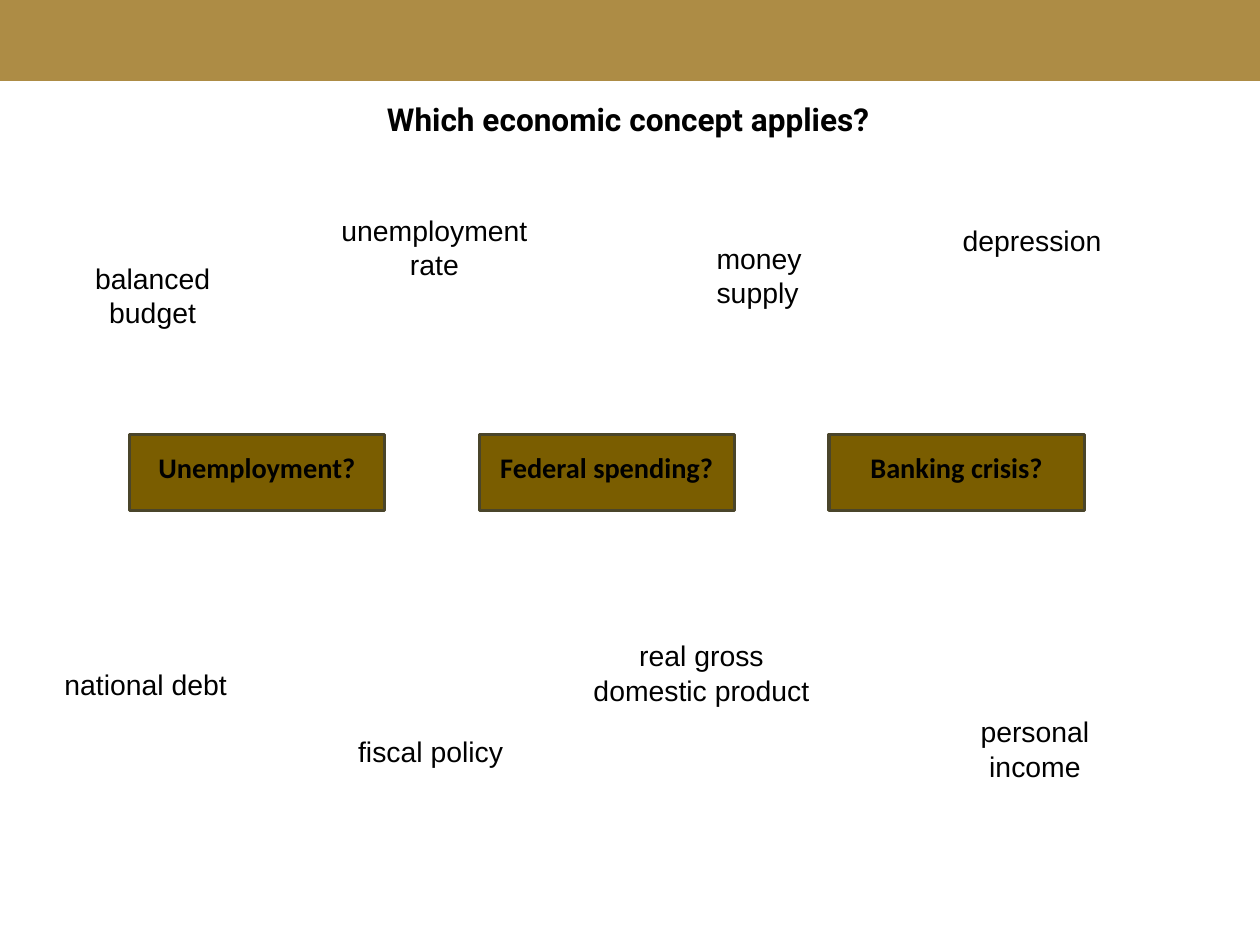
from pptx import Presentation
from pptx.dml.color import RGBColor
from pptx.enum.shapes import MSO_SHAPE
from pptx.enum.text import MSO_ANCHOR, MSO_AUTO_SIZE, PP_ALIGN
from pptx.util import Inches, Pt

COLORS = {"band": "AD8C45", "category": "7A5D00", "outline": "4A452A", "text": "000000"}


def add_rectangle(left, top, width, height, fill, line, line_width):
    box = page.shapes.add_shape(
        MSO_SHAPE.RECTANGLE, Inches(left), Inches(top), Inches(width), Inches(height))
    box.shadow.inherit = False
    box.fill.solid()
    box.fill.fore_color.rgb = RGBColor.from_string(COLORS[fill])
    box.line.color.rgb = RGBColor.from_string(COLORS[line])
    box.line.width = Pt(line_width)
    return box


def write_text(box, text, font, size, bold, align):
    frame = box.text_frame
    frame.word_wrap = True
    frame.vertical_anchor = MSO_ANCHOR.TOP
    para = frame.paragraphs[0]
    para.text = text
    para.alignment = align
    para.font.name = font
    para.font.size = Pt(size)
    para.font.bold = bold
    para.font.color.rgb = RGBColor.from_string(COLORS["text"])


deck = Presentation()
deck.slide_width = Inches(11.11)
deck.slide_height = Inches(8.33)
page = deck.slides.add_slide(deck.slide_layouts[5])

add_rectangle(0, 0, 11.11, 0.69, "band", "band", 3)

title = page.shapes.title
title.left, title.top = Inches(1.04), Inches(0.83)
title.width, title.height = Inches(9), Inches(0.71)
write_text(title, "Which economic concept applies?", "Roboto", 20, True, PP_ALIGN.CENTER)
title.text_frame.auto_size = MSO_AUTO_SIZE.NONE

concepts = [
    ("balanced budget", 0.72, 2.25, 1.25, 0.71, PP_ALIGN.CENTER),
    ("unemployment rate", 2.72, 1.83, 2.22, 0.71, PP_ALIGN.CENTER),
    ("money supply", 6.22, 2.08, 1.08, 0.71, PP_ALIGN.LEFT),
    ("depression", 8.39, 1.92, 1.5, 0.4, PP_ALIGN.LEFT),
    ("national debt", 0.47, 5.83, 1.64, 0.4, PP_ALIGN.LEFT),
    ("fiscal policy", 3.06, 6.42, 1.5, 0.4, PP_ALIGN.LEFT),
    ("real gross domestic product", 5.06, 5.58, 2.25, 0.71, PP_ALIGN.CENTER),
    ("personal income", 8.14, 6.25, 1.97, 0.71, PP_ALIGN.CENTER),
]
for concept, left, top, width, height, align in concepts:
    box = page.shapes.add_textbox(Inches(left), Inches(top), Inches(width), Inches(height))
    write_text(box, concept, "Arial", 18, False, align)

categories = ["Unemployment?", "Federal spending?", "Banking crisis?"]
for index, category in enumerate(categories):
    box = add_rectangle(1.14 + index * 3.085, 3.83, 2.25, 0.67, "category", "outline", 2)
    write_text(box, category, "Calibri", 18, True, PP_ALIGN.CENTER)
    box.text_frame.margin_top = Inches(0.14)

deck.save("out.pptx")
